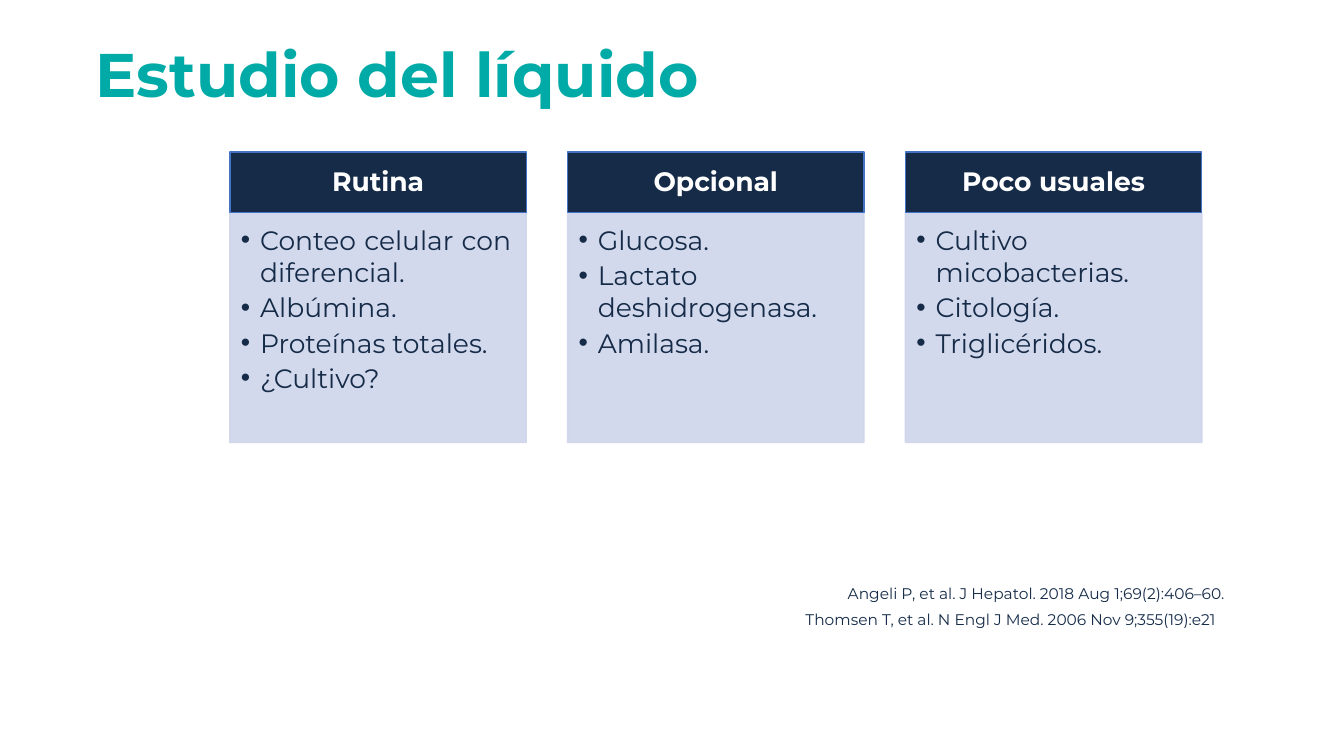
"""Build the slide on fluid studies."""
import dataclasses

import lxml.etree
import pptx
import pptx.dml.color
import pptx.enum.shapes
import pptx.enum.text
import pptx.oxml.ns
import pptx.util

Inches = pptx.util.Inches
Pt = pptx.util.Pt
Align = pptx.enum.text.PP_ALIGN
Anchor = pptx.enum.text.MSO_ANCHOR
qn = pptx.oxml.ns.qn

FONT = "Montserrat"
COLORS = {"navy": "152B48", "teal": "00AAA7", "pale": "CFD5EA", "edge": "4472C4", "white": "FFFFFF"}
LEFT, TOP, WIDTH, STEP = 2.28, 1.51, 2.94, 3.35
HEAD, BODY = 0.6, 2.28


@dataclasses.dataclass
class Column:
    """A heading with its list of tests."""
    head: str
    items: list[str]


@dataclasses.dataclass
class Source:
    """A cited paper and its place."""
    text: str
    left: float
    top: float
    width: float


COLUMNS = [
    Column("Rutina", ["Conteo celular con diferencial.", "Albúmina.", "Proteínas totales.", "¿Cultivo?"]),
    Column("Opcional", ["Glucosa.", "Lactato deshidrogenasa.", "Amilasa."]),
    Column("Poco usuales", ["Cultivo micobacterias.", "Citología.", "Triglicéridos."]),
]
SOURCES = [
    Source("Thomsen T, et al. N Engl J Med. 2006 Nov 9;355(19):e21", 7.89, 6, 5.2),
    Source("Angeli P, et al. J Hepatol. 2018 Aug 1;69(2):406–60.", 8.31, 5.75, 5),
]


def color(name: str) -> pptx.dml.color.RGBColor:
    """Return a named color."""
    return pptx.dml.color.RGBColor.from_string(COLORS[name])


def place(box, left: float, top: float, width: float, height: float) -> None:
    """Move and size a box, in inches."""
    box.left, box.top = Inches(left), Inches(top)
    box.width, box.height = Inches(width), Inches(height)


def style(frame, size: float, hue: str, bold: bool = False) -> None:
    """Format every run in a frame."""
    for para in frame.paragraphs:
        for run in para.runs:
            run.font.name, run.font.size, run.font.bold = FONT, Pt(size), bold
            run.font.color.rgb = color(hue)


def pad(frame, left: float, top: float, right: float, bottom: float) -> None:
    """Set the insets of a frame, in inches."""
    frame.margin_left, frame.margin_top = Inches(left), Inches(top)
    frame.margin_right, frame.margin_bottom = Inches(right), Inches(bottom)


def paint(box, fill: str, line: str) -> None:
    """Set the fill and line of a box."""
    box.fill.solid()
    box.fill.fore_color.rgb = color(fill)
    box.line.color.rgb = color(line)
    box.line.width = Pt(1)


def add_title(slide, text: str) -> None:
    """Fill the title placeholder."""
    box = slide.shapes.title
    place(box, 0.85, 0.31, 6.25, 0.84)
    frame = box.text_frame
    frame.text = text
    frame.auto_size = pptx.enum.text.MSO_AUTO_SIZE.NONE
    frame.word_wrap = False
    frame.vertical_anchor = Anchor.TOP
    frame.paragraphs[0].alignment = Align.LEFT
    style(frame, 44, "teal", True)


def add_head(slide, text: str, left: float) -> None:
    """Draw the heading of a column."""
    box = slide.shapes.add_shape(
        pptx.enum.shapes.MSO_SHAPE.RECTANGLE, Inches(left), Inches(TOP), Inches(WIDTH), Inches(HEAD))
    box.shadow.inherit = False
    paint(box, "navy", "edge")
    frame = box.text_frame
    frame.text = text
    frame.word_wrap = True
    frame.vertical_anchor = Anchor.MIDDLE
    pad(frame, 0.15, 0.08, 0.15, 0.08)
    frame.paragraphs[0].alignment = Align.CENTER
    frame.paragraphs[0].line_spacing = 0.9
    style(frame, 19, "white", True)


def fill_list(box, items: list[str], left: float) -> None:
    """Fill a body placeholder with a column's list."""
    place(box, left, TOP + HEAD, WIDTH, BODY)
    paint(box, "pale", "pale")
    for tint in box.element.spPr.iter(qn("a:srgbClr")):
        lxml.etree.SubElement(tint, qn("a:alpha"), val="90000")
    frame = box.text_frame
    frame.text = "\n".join(items)
    frame.auto_size = pptx.enum.text.MSO_AUTO_SIZE.NONE
    frame.word_wrap = True
    frame.vertical_anchor = Anchor.TOP
    pad(frame, 0.11, 0.11, 0.15, 0.17)
    for para in frame.paragraphs:
        para.alignment = Align.JUSTIFY
        para.space_before, para.space_after = Pt(0), Pt(2.5)
        props = para._p.get_or_add_pPr()
        props.set("marL", str(Inches(0.19)))
        props.set("indent", str(Inches(-0.19)))
        lxml.etree.SubElement(props, qn("a:buFont"), typeface="Arial")
        lxml.etree.SubElement(props, qn("a:buChar"), char="•")
    style(frame, 19, "navy")


def add_source(slide, source: Source) -> None:
    """Write a cited paper."""
    box = slide.shapes.add_textbox(
        Inches(source.left), Inches(source.top), Inches(source.width), Inches(0.29))
    box.text_frame.text = source.text
    box.text_frame.word_wrap = True
    style(box.text_frame, 11, "navy")


def main() -> None:
    """Build and save the deck."""
    deck = pptx.Presentation()
    deck.slide_width, deck.slide_height = Inches(13.33), Inches(7.5)
    slide = deck.slides.add_slide(deck.slide_layouts.get_by_name("Comparison"))
    add_title(slide, "Estudio del líquido")
    boxes = list(slide.placeholders)[1:]
    for i, (column, box) in enumerate(zip(COLUMNS, boxes)):
        left = LEFT + i * STEP
        add_head(slide, column.head, left)
        fill_list(box, column.items, left)
    for box in boxes[len(COLUMNS):]:
        box.element.getparent().remove(box.element)
    for source in SOURCES:
        add_source(slide, source)
    deck.save("out.pptx")


if __name__ == "__main__":
    main()
